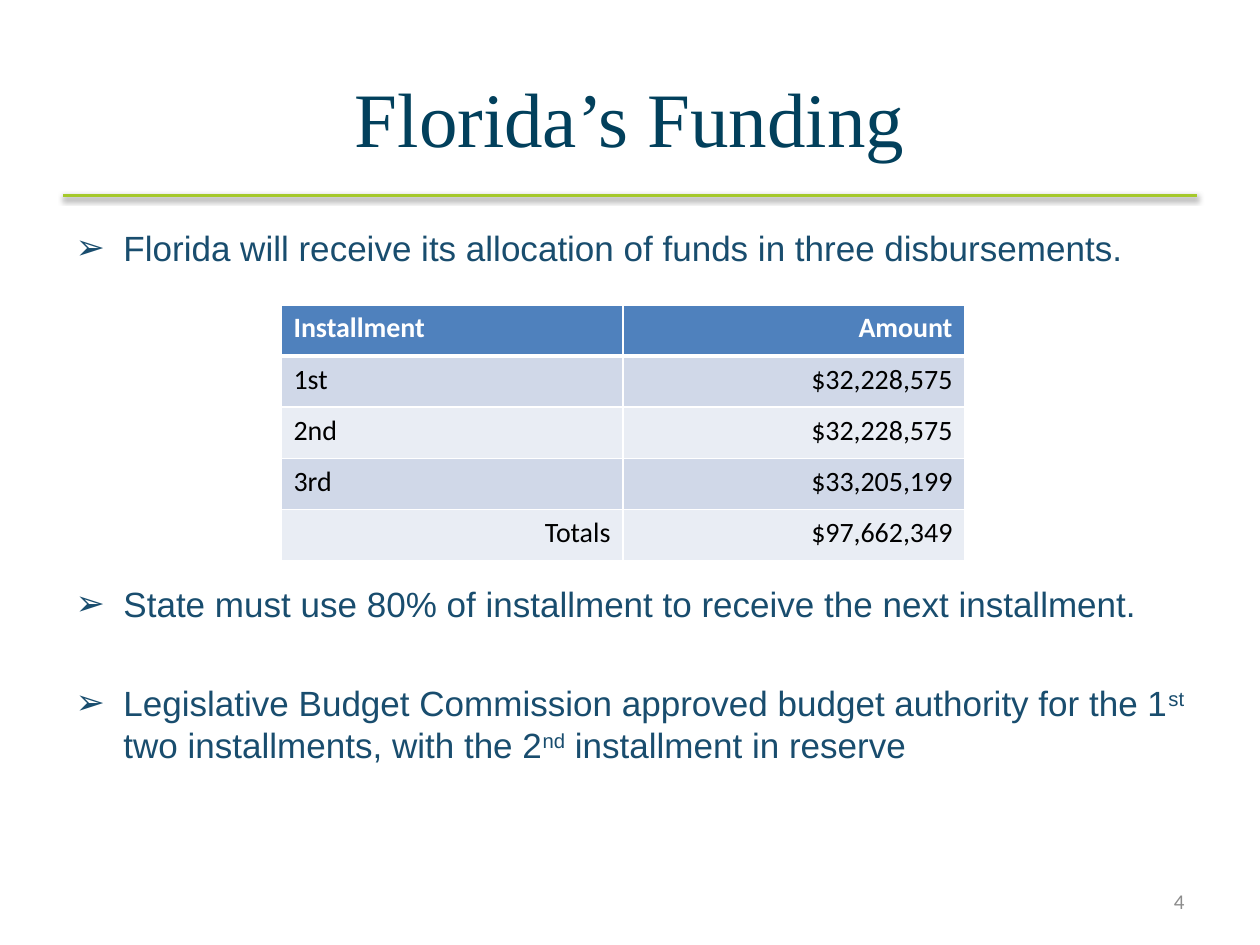
from dataclasses import dataclass

from lxml import etree
from pptx import Presentation
from pptx import util as u
from pptx.dml.color import RGBColor
from pptx.enum import shapes, text
from pptx.oxml import ns

Inches = u.Inches
LEFT, RIGHT = text.PP_ALIGN.LEFT, text.PP_ALIGN.RIGHT


@dataclass(frozen=True)
class Theme:
    head: str = "Times New Roman"
    body: str = "Arial"
    grid: str = "Calibri"
    navy: str = "02405C"
    blue: str = "194D6E"
    lime: str = "A5C92B"
    gray: str = "8C8C8C"
    white: str = "FFFFFF"
    black: str = "000000"
    top: str = "4F81BD"
    bands: tuple = ("D0D8E8", "E9EDF4")
    title_pt: int = 44
    list_pt: int = 20
    cell_pt: int = 16
    page_pt: int = 12


T = Theme()

# Space before in points, then runs; True marks a superscript.
POINTS = [
    (0, [("Florida will receive its allocation of funds in three disbursements.", False)]),
    (179, [("State must use 80% of installment to receive the next installment.", False)]),
    (33, [
        ("Legislative Budget Commission approved budget authority for the 1", False),
        ("st", True),
        (" two installments, with the 2", False),
        ("nd", True),
        (" installment in reserve", False),
    ]),
]
ROWS = [
    ("Installment", "Amount"),
    ("1st", "$32,228,575"),
    ("2nd", "$32,228,575"),
    ("3rd", "$33,205,199"),
    ("Totals", "$97,662,349"),
]


def add_node(parent, tag, **attrs):
    node = etree.SubElement(parent, ns.qn(tag))
    for key, value in attrs.items():
        node.set(key, str(value))
    return node


def add_run(para, words, face, size, color, bold=False):
    run = para.add_run()
    run.text = words
    font = run.font
    font.name, font.size, font.bold = face, u.Pt(size), bold
    font.color.rgb = RGBColor.from_string(color)
    return run


def place(shape, box):
    shape.left, shape.top, shape.width, shape.height = map(Inches, box)


def add_title(slide, box):
    title = slide.shapes.title
    place(title, box)
    frame = title.text_frame
    frame.vertical_anchor = text.MSO_ANCHOR.MIDDLE
    para = frame.paragraphs[0]
    para.alignment = text.PP_ALIGN.CENTER
    add_run(para, "Florida’s Funding", T.head, T.title_pt, T.navy)


def add_rule(slide, box):
    """Draw the shadowed line under the title."""
    x, y, w, h = map(Inches, box)
    rule = slide.shapes.add_connector(
        shapes.MSO_CONNECTOR.STRAIGHT, x, y, x + w, y + h)
    rule.line.color.rgb = RGBColor.from_string(T.lime)
    rule.line.width = u.Pt(2)
    effects = add_node(rule._element.spPr, "a:effectLst")
    shade = add_node(effects, "a:outerShdw", blurRad=u.Pt(3.1), dist=u.Pt(1.6),
                     dir=90 * 60000, rotWithShape=0)
    color = add_node(shade, "a:srgbClr", val=T.black)
    add_node(color, "a:alpha", val=38000)


def add_list(slide, box):
    body = slide.placeholders[1]
    place(body, box)
    frame = body.text_frame
    frame.auto_size = text.MSO_AUTO_SIZE.NONE
    frame.margin_right = Inches(0.05)
    for i, (gap, runs) in enumerate(POINTS):
        para = frame.add_paragraph() if i else frame.paragraphs[0]
        props = para._p.get_or_add_pPr()
        props.set("marL", str(Inches(0.38)))
        props.set("indent", str(Inches(-0.38)))
        add_node(props, "a:buFont", typeface=T.body)
        add_node(props, "a:buChar", char="➢")
        para.space_before = u.Pt(gap)
        for words, raised in runs:
            run = add_run(para, words, T.body, T.list_pt, T.blue)
            if raised:
                run._r.get_or_add_rPr().set("baseline", "30000")


def set_edges(cell, base):
    """Give a cell white borders; base is the width of the lower one."""
    props = cell._tc.get_or_add_tcPr()
    for i, (side, width) in enumerate((("L", 1), ("R", 1), ("T", 1), ("B", base))):
        edge = add_node(props, "a:ln" + side, w=u.Pt(width))
        fill = add_node(edge, "a:solidFill")
        add_node(fill, "a:srgbClr", val=T.white)
        props.remove(edge)
        props.insert(i, edge)


def add_grid(slide, box):
    x, y, w, h = map(Inches, box)
    grid = slide.shapes.add_table(len(ROWS), len(ROWS[0]), x, y, w, h).table
    last = len(ROWS) - 1
    for r, row in enumerate(ROWS):
        for c, words in enumerate(row):
            cell = grid.cell(r, c)
            cell.fill.solid()
            shade = T.bands[(r - 1) % 2] if r else T.top
            cell.fill.fore_color.rgb = RGBColor.from_string(shade)
            set_edges(cell, 1 if r else 3)
            para = cell.text_frame.paragraphs[0]
            para.alignment = RIGHT if c or r == last else LEFT
            add_run(para, words, T.grid, T.cell_pt,
                    T.black if r else T.white, bold=r == 0)


def add_page(slide, box):
    """Put the slide number in its corner."""
    frame = slide.shapes.add_textbox(*map(Inches, box)).text_frame
    frame.word_wrap = True
    frame.vertical_anchor = text.MSO_ANCHOR.MIDDLE
    para = frame.paragraphs[0]
    para.alignment = RIGHT
    add_run(para, "4", T.grid, T.page_pt, T.gray)


def main():
    deck = Presentation()
    deck.slide_width, deck.slide_height = Inches(10), Inches(7.5)
    slide = deck.slides.add_slide(deck.slide_layouts[1])
    add_rule(slide, (0.5, 1.55, 9, 0))
    add_title(slide, (0.5, 0.3, 9, 1.25))
    add_list(slide, (0.5, 1.75, 9, 4.95))
    add_page(slide, (7.17, 6.95, 2.33, 0.4))
    add_grid(slide, (2.23, 2.42, 5.43, 2.03))
    deck.save("out.pptx")


if __name__ == "__main__":
    main()
